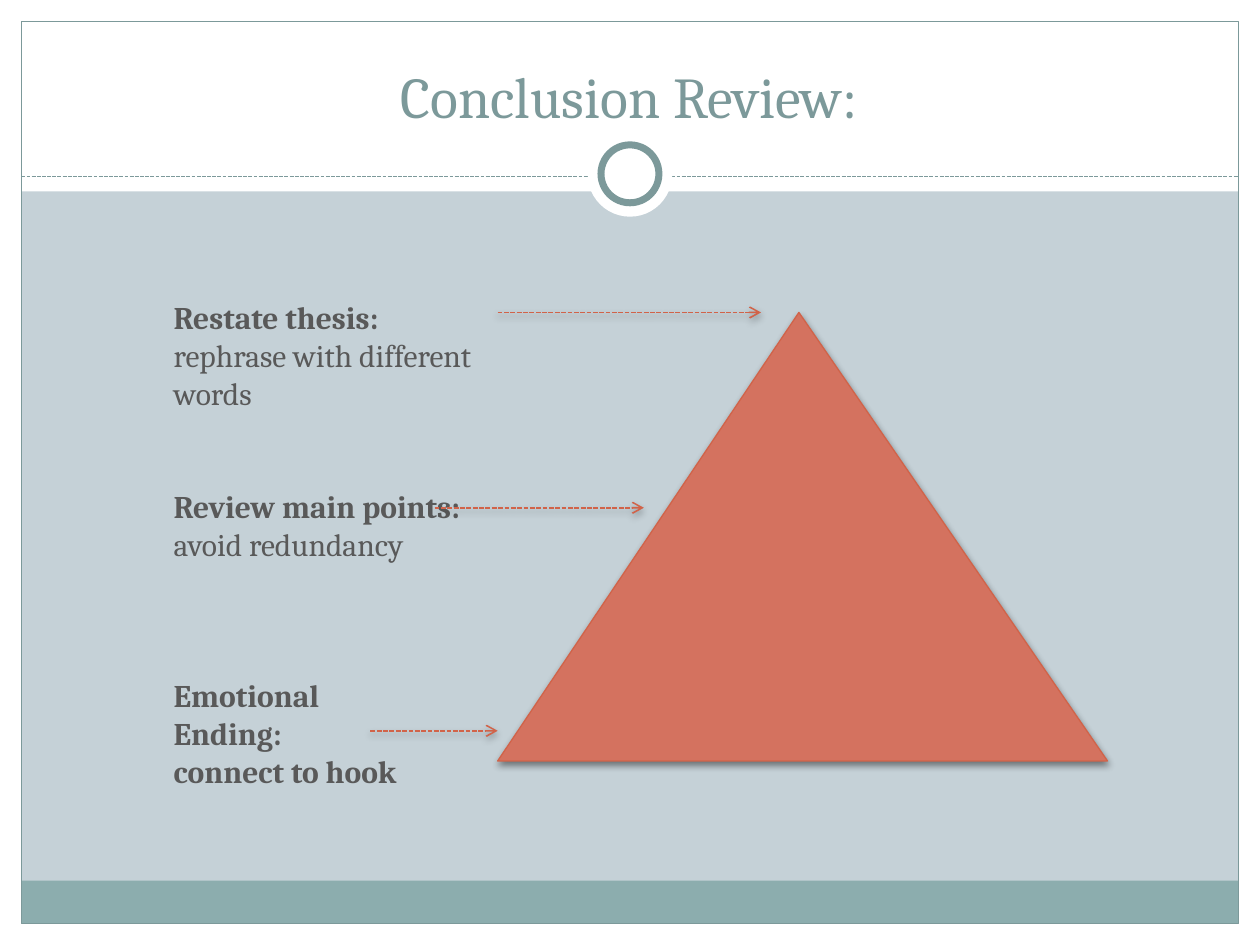
import lxml.etree
import pptx
import pptx.dml.color
import pptx.enum.dml
import pptx.enum.shapes
import pptx.enum.text
import pptx.oxml.ns
import pptx.util

WHITE = pptx.dml.color.RGBColor(0xFF, 0xFF, 0xFF)
MIST = pptx.dml.color.RGBColor(0xC5, 0xD1, 0xD7)
SEA = pptx.dml.color.RGBColor(0x8C, 0xAD, 0xAE)
SLATE = pptx.dml.color.RGBColor(0x7C, 0x99, 0x9A)
CORAL = pptx.dml.color.RGBColor(0xD4, 0x72, 0x5F)
RUST = pptx.dml.color.RGBColor(0xD1, 0x63, 0x49)
GRAY = pptx.dml.color.RGBColor(0x59, 0x59, 0x59)

qn = pptx.oxml.ns.qn
kinds = pptx.enum.shapes.MSO_SHAPE
anchors = pptx.enum.text.MSO_ANCHOR
aligns = pptx.enum.text.PP_ALIGN

deck = pptx.Presentation()
deck.slide_width = pptx.util.Inches(10)
deck.slide_height = pptx.util.Inches(7.5)
page = deck.slides.add_slide(deck.slide_layouts[6])
page.background.fill.solid()
page.background.fill.fore_color.rgb = MIST

# Grid of 100 columns by 75 rows
COLUMNS, ROWS = 100, 75
column = deck.slide_width / COLUMNS
row = deck.slide_height / ROWS


def place(left, top, width, height):
    return [round(left * column), round(top * row),
            round(width * column), round(height * row)]


def add_text(paragraphs, area, size, color, anchor=anchors.TOP, align=aligns.LEFT):
    """Each paragraph is (space before in lines, [(text, bold), ...])."""
    box = page.shapes.add_textbox(*place(*area))
    frame = box.text_frame
    frame.word_wrap = True
    frame.vertical_anchor = anchor
    for index, (gap, spans) in enumerate(paragraphs):
        para = frame.paragraphs[0] if index == 0 else frame.add_paragraph()
        para.alignment = align
        para.space_before = pptx.util.Pt(gap * size * 1.2)
        for position, (text, bold) in enumerate(spans):
            if position:
                para.add_line_break()
            span = para.add_run()
            span.text = text
            span.font.name = "Cambria"
            span.font.size = pptx.util.Pt(size)
            span.font.bold = bold
            span.font.color.rgb = color


# Frame, footer band, header ring and triangle, from back to front
EDGE = 1.7
INNER = COLUMNS - 2 * EDGE
RULE_ROW = 14
CENTER = COLUMNS / 2
shapes = [
    (kinds.RECTANGLE, (0, ROWS - EDGE, COLUMNS, EDGE), WHITE, None, 0),
    (kinds.RECTANGLE, (0, 0, COLUMNS, 15.2), WHITE, None, 0),
    (kinds.RECTANGLE, (0, 0, EDGE, ROWS), WHITE, None, 0),
    (kinds.RECTANGLE, (COLUMNS - EDGE, 0, EDGE, ROWS), WHITE, None, 0),
    (kinds.RECTANGLE, (EDGE, 69.9, INNER, 3.4), SEA, None, 0),
    (kinds.RECTANGLE, (EDGE, EDGE, INNER, ROWS - 2 * EDGE), None, SLATE, 0.75),
    (kinds.OVAL, (CENTER - 3.35, 10.5, 6.7, 6.7), WHITE, None, 0),
    (kinds.OVAL, (CENTER - 2.3, 11.5, 4.6, 4.6), WHITE, SLATE, 4),
    (kinds.ISOSCELES_TRIANGLE, (39.5, 24.8, 48.4, 35.6), CORAL, RUST, 0.75),
]
RING_BACK = 6
for index, (kind, area, fill, outline, weight) in enumerate(shapes):
    if index == RING_BACK:
        # Dashed rule runs behind the ring
        header_rule = page.shapes.add_connector(
            pptx.enum.shapes.MSO_CONNECTOR.STRAIGHT,
            *place(EDGE, RULE_ROW, COLUMNS - EDGE, RULE_ROW))
    shape = page.shapes.add_shape(kind, *place(*area))
    shape.shadow.inherit = False
    if fill is None:
        shape.fill.background()
    else:
        shape.fill.solid()
        shape.fill.fore_color.rgb = fill
    if outline is None:
        shape.line.fill.background()
    else:
        shape.line.color.rgb = outline
        shape.line.width = pptx.util.Pt(weight)
triangle = shape
triangle.adjustments[0] = 0.494

# Title and notes beside the triangle
add_text([(0, [("Conclusion Review:", False)])], (3.3, 2.5, 93.3, 8.3), 33, SLATE,
         anchor=anchors.BOTTOM, align=aligns.CENTER)
add_text([
    (0, [("Restate thesis:", True), ("rephrase with different words", False)]),
    (2, [("Review main points:", True)]),
    (0, [("avoid redundancy", False)]),
    (3, [("Emotional", True)]),
    (0, [("Ending:", True)]),
    (0, [("connect to hook", True)]),
], (12.8, 23.2, 27.6, 43.4), 18, GRAY)

# Arrows to the triangle: start column, end column, row
arrows = [
    page.shapes.add_connector(pptx.enum.shapes.MSO_CONNECTOR.STRAIGHT,
                              *place(start, level, end, level))
    for start, end, level in [(29.4, 39.5, 58), (34.5, 51.1, 40.3), (39.5, 60.4, 24.8)]
]
for line in [header_rule] + arrows:
    is_arrow = line is not header_rule
    line.line.color.rgb = RUST if is_arrow else SLATE
    line.line.width = pptx.util.Pt(0.9 if is_arrow else 0.75)
    line.line.dash_style = pptx.enum.dml.MSO_LINE.SQUARE_DOT
    properties = line._element.spPr
    if is_arrow:
        lxml.etree.SubElement(properties.find(qn("a:ln")), qn("a:tailEnd"), type="arrow")
    lxml.etree.SubElement(properties, qn("a:effectLst"))

# Soft shadows straight below the triangle and the arrows
for part, opacity in [(triangle, 45)] + [(arrow, 35) for arrow in arrows]:
    effects = part._element.spPr.find(qn("a:effectLst"))
    shadow = lxml.etree.SubElement(
        effects, qn("a:outerShdw"), blurRad=str(pptx.util.Pt(4)),
        dist=str(pptx.util.Pt(2)), dir=str(90 * 60000), rotWithShape="0")
    tint = lxml.etree.SubElement(shadow, qn("a:srgbClr"), val="000000")
    lxml.etree.SubElement(tint, qn("a:alpha"), val=str(opacity * 1000))

deck.save("out.pptx")
